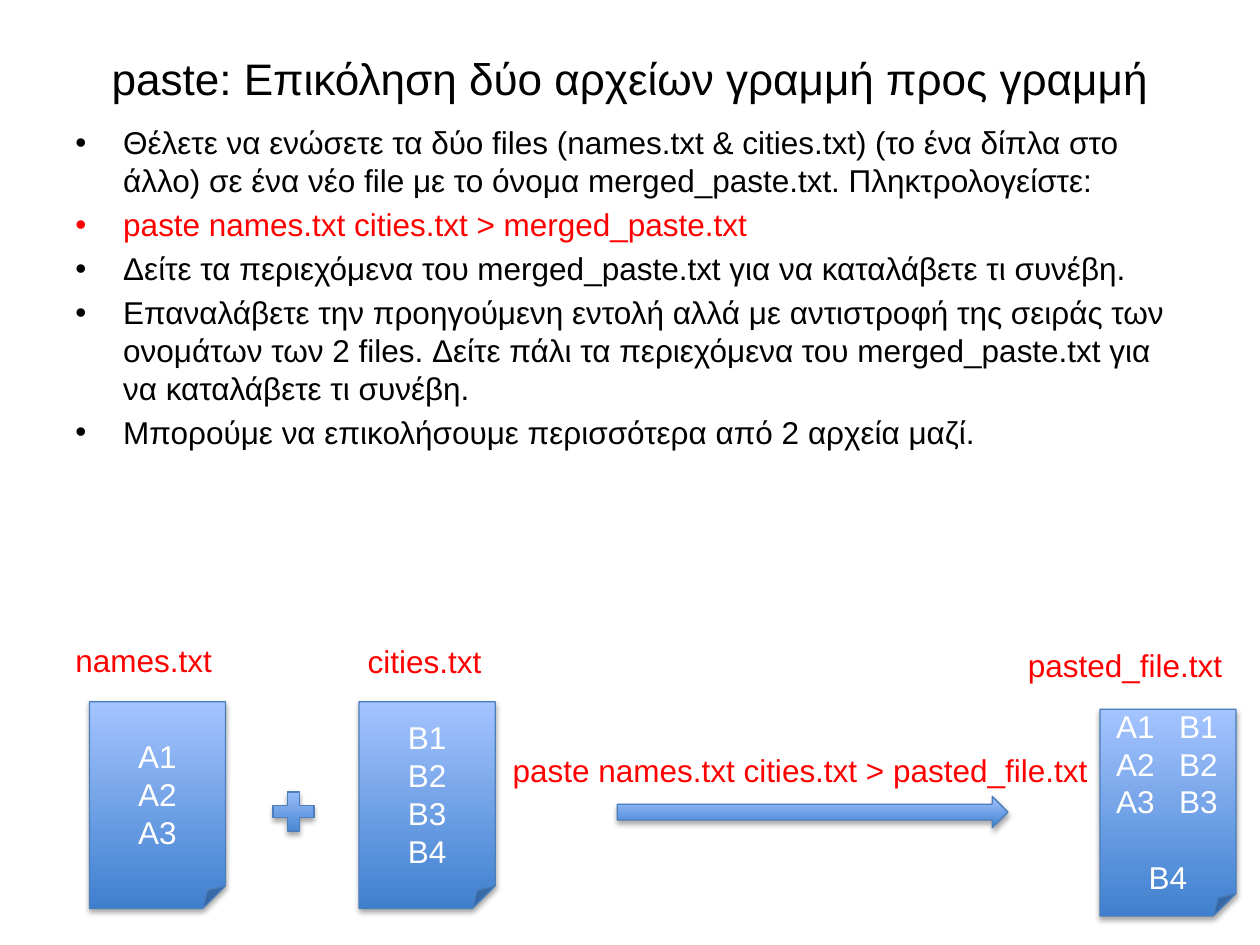
"""Build the slide that explains how paste joins two files line by line."""
from lxml.etree import SubElement
from pptx import Presentation
from pptx.dml.color import RGBColor
from pptx.enum.shapes import MSO_SHAPE as Shape
from pptx.enum.text import MSO_ANCHOR as Anchor, PP_ALIGN as Align
from pptx.oxml.ns import qn
from pptx.util import Inches, Pt

BLACK = RGBColor(0x00, 0x00, 0x00)
RED = RGBColor(0xFF, 0x00, 0x00)
WHITE = RGBColor(0xFF, 0xFF, 0xFF)
DARK_BLUE = RGBColor(0x3F, 0x80, 0xCE)
LIGHT_BLUE = RGBColor(0xA4, 0xC4, 0xFF)
EDGE_BLUE = RGBColor(0x4B, 0x7E, 0xBC)

TITLE = "paste: Επικόληση δύο αρχείων γραμμή προς γραμμή"
BULLETS = [
    ("Θέλετε να ενώσετε τα δύο files (names.txt & cities.txt) (το ένα δίπλα στο άλλο) "
     "σε ένα νέο file με το όνομα merged_paste.txt. Πληκτρολογείστε:", BLACK),
    ("paste names.txt cities.txt > merged_paste.txt", RED),
    ("Δείτε τα περιεχόμενα του merged_paste.txt για να καταλάβετε τι συνέβη.", BLACK),
    ("Επαναλάβετε την προηγούμενη εντολή αλλά με αντιστροφή της σειράς των ονομάτων "
     "των 2 files. Δείτε πάλι τα περιεχόμενα του merged_paste.txt για να καταλάβετε "
     "τι συνέβη.", BLACK),
    ("Μπορούμε να επικολήσουμε περισσότερα από 2 αρχεία μαζί.", BLACK),
]
FILES = [
    (0.71, 5.57, ["A1", "A2", "A3"]),
    (2.85, 5.57, ["B1", "B2", "B3", "B4"]),
    (8.73, 5.63, ["A1\tB1", "A2\tB2", "A3\tB3", "B4"]),
]
FILE_SIZE = (1.08, 1.64)
SYMBOLS = [
    (Shape.RIGHT_ARROW, (4.9, 6.32, 3.1, 0.25)),
    (Shape.MATH_PLUS, (2.11, 6.23, 0.44, 0.42)),
]
LABELS = [
    ("names.txt", (0.5, 5.04, 1.3, 0.4), False),
    ("cities.txt", (2.82, 5.05, 1.11, 0.4), False),
    ("paste names.txt cities.txt > pasted_file.txt", (3.97, 5.91, 4.87, 0.4), True),
    ("pasted_file.txt", (8.06, 5.08, 1.76, 0.4), False),
]
INDENT = 0.38
COLUMN_INDENT, COLUMN_TAB = 0.03, 0.55


def add_span(para, text, color, size=18):
    span = para.add_run()
    span.text = text
    span.font.name = "Arial"
    span.font.size = Pt(size)
    span.font.color.rgb = color


def add_para(frame, index):
    return frame.paragraphs[0] if index == 0 else frame.add_paragraph()


def add_text_frame(page, place, wrap=True):
    frame = page.shapes.add_textbox(*map(Inches, place)).text_frame
    frame.word_wrap = wrap
    return frame


def add_bullet(para):
    props = para._p.get_or_add_pPr()
    props.set("marL", str(Inches(INDENT)))
    props.set("indent", str(-Inches(INDENT)))
    SubElement(props, qn("a:buFont")).set("typeface", "Arial")
    SubElement(props, qn("a:buChar")).set("char", "•")


def add_columns(para):
    props = para._p.get_or_add_pPr()
    props.set("marL", str(Inches(COLUMN_INDENT)))
    props.set("indent", "0")
    tab = SubElement(SubElement(props, qn("a:tabLst")), qn("a:tab"))
    tab.set("pos", str(Inches(COLUMN_TAB)))
    tab.set("algn", "l")


def add_blue_shape(page, kind, place):
    shape = page.shapes.add_shape(kind, *map(Inches, place))
    shape.fill.gradient()
    shape.fill.gradient_angle = 90
    for stop, color in zip(shape.fill.gradient_stops, (DARK_BLUE, LIGHT_BLUE)):
        stop.color.rgb = color
    shape.line.color.rgb = EDGE_BLUE
    shape.line.width = Pt(0.75)
    shape.shadow.inherit = False
    effects = shape._element.spPr.find(qn("a:effectLst"))
    shadow = SubElement(effects, qn("a:outerShdw"), blurRad=str(Pt(3.1)),
                        dist=str(Pt(1.8)), dir="5400000", rotWithShape="0")
    shade = SubElement(shadow, qn("a:srgbClr"), val=str(BLACK))
    SubElement(shade, qn("a:alpha"), val="35000")
    return shape


def add_file(page, left, top, lines):
    frame = add_blue_shape(page, Shape.FOLDED_CORNER, (left, top, *FILE_SIZE)).text_frame
    frame.word_wrap = True
    frame.vertical_anchor = Anchor.MIDDLE
    has_columns = any("\t" in line for line in lines)
    for index, line in enumerate(lines):
        para = add_para(frame, index)
        if "\t" in line:
            add_columns(para)
            para.alignment = Align.LEFT
        else:
            para.alignment = Align.CENTER
            if has_columns:
                para.space_before = Pt(21.6)
        add_span(para, line, WHITE)


def main():
    deck = Presentation()
    deck.slide_width, deck.slide_height = Inches(10), Inches(7.5)
    page = deck.slides.add_slide(deck.slide_layouts[6])

    title = add_text_frame(page, (0.5, 0.3, 9, 0.63))
    title.vertical_anchor = Anchor.MIDDLE
    title.paragraphs[0].alignment = Align.CENTER
    add_span(title.paragraphs[0], TITLE, BLACK, 25.2)

    body = add_text_frame(page, (0.5, 0.93, 9, 2.69))
    for index, (text, color) in enumerate(BULLETS):
        para = add_para(body, index)
        add_bullet(para)
        para.space_before = Pt(3.6 if index else 0)
        add_span(para, text, color)

    for left, top, lines in FILES:
        add_file(page, left, top, lines)
    for kind, place in SYMBOLS:
        add_blue_shape(page, kind, place)
    for text, place, wrap in LABELS:
        add_span(add_text_frame(page, place, wrap).paragraphs[0], text, RED)

    deck.save("out.pptx")


if __name__ == "__main__":
    main()
